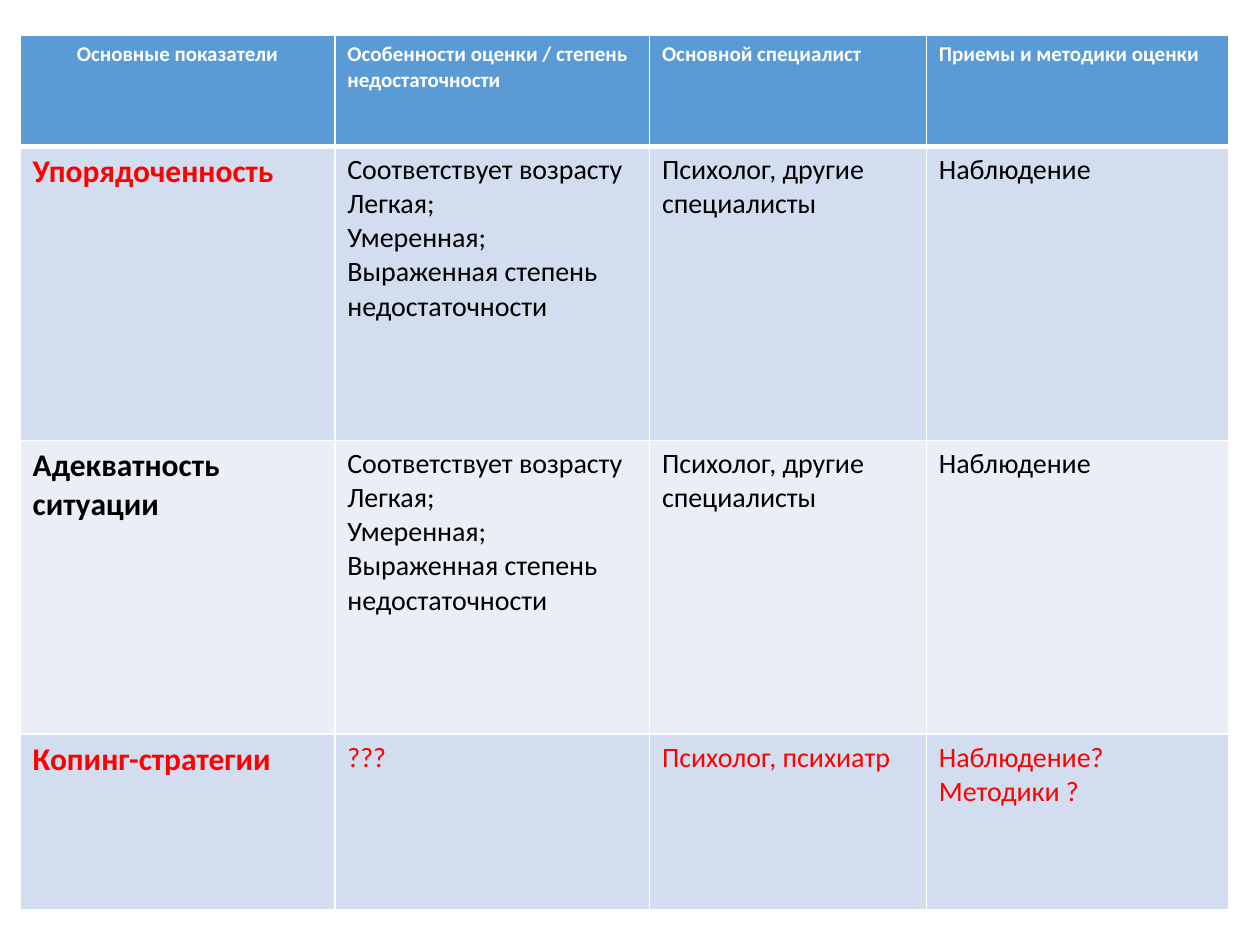
import dataclasses

import lxml.etree
import pptx
import pptx.dml.color
import pptx.enum.text
import pptx.oxml.ns
import pptx.util

PX = 9144  # EMU in one px, at 100 px to the inch


@dataclasses.dataclass(frozen=True)
class Theme:
    font: str = "Calibri"
    white: str = "FFFFFF"
    black: str = "000000"
    red: str = "FF0000"
    head: str = "5B9BD5"
    bands: tuple = ("D2DEEF", "EAEFF7")
    small: int = 12
    body: int = 16
    large: int = 18


THEME = Theme()
COLS = (250, 250, 220, 240)
ROWS = (88, 233, 233, 139)
HEADS = (
    "Основные показатели",
    "Особенности оценки / степень недостаточности",
    "Основной специалист",
    "Приемы и методики оценки",
)
GRADES = (
    "Соответствует возрасту\nЛегкая;\nУмеренная;\n"
    "Выраженная степень недостаточности"
)
STAFF = "Психолог, другие специалисты"
WATCH = "Наблюдение"
# Each row: colour of the first cell, colour of the others, texts
BODY = (
    (THEME.red, THEME.black, ("Упорядоченность", GRADES, STAFF, WATCH)),
    (THEME.black, THEME.black, ("Адекватность ситуации", GRADES, STAFF, WATCH)),
    (THEME.red, THEME.red, ("Копинг-стратегии", "???", "Психолог, психиатр",
                            "Наблюдение?\nМетодики ?")),
)


def rgb(code):
    return pptx.dml.color.RGBColor.from_string(code)


def write(frame, text, size=THEME.body, color=THEME.black, bold=False,
          align=pptx.enum.text.PP_ALIGN.LEFT):
    """Put each line of text in a paragraph of its own."""
    frame.text = text
    for para in frame.paragraphs:
        para.alignment = align
        for run in para.runs:
            font = run.font
            font.name = THEME.font
            font.size = pptx.util.Pt(size)
            font.bold = bold
            font.color.rgb = rgb(color)


def edge(cell, base=1):
    """Draw white borders, the bottom one base points wide."""
    props = cell._tc.get_or_add_tcPr()
    for side, width in (("L", 1), ("R", 1), ("T", 1), ("B", base)):
        line = lxml.etree.SubElement(
            props, pptx.oxml.ns.qn("a:ln" + side), w=str(pptx.util.Pt(width)))
        fill = lxml.etree.SubElement(line, pptx.oxml.ns.qn("a:solidFill"))
        lxml.etree.SubElement(
            fill, pptx.oxml.ns.qn("a:srgbClr"), val=THEME.white)


def paint(cell, color, base=1):
    edge(cell, base)
    cell.fill.solid()
    cell.fill.fore_color.rgb = rgb(color)


def head_row(grid):
    for col, text in enumerate(HEADS):
        cell = grid.cell(0, col)
        paint(cell, THEME.head, base=3)
        align = pptx.enum.text.PP_ALIGN
        write(cell.text_frame, text, size=THEME.small, color=THEME.white,
              bold=True, align=align.LEFT if col else align.CENTER)


def body_rows(grid):
    for row, (first, rest, texts) in enumerate(BODY):
        for col, text in enumerate(texts):
            cell = grid.cell(row + 1, col)
            paint(cell, THEME.bands[row % 2])
            if col:
                write(cell.text_frame, text, color=rest)
            else:
                write(cell.text_frame, text, size=THEME.large, color=first,
                      bold=True)


def add_grid(slide, left, top, width, height):
    """Fill the box with the table, sharing it out by COLS and ROWS."""
    grid = slide.shapes.add_table(
        len(ROWS), len(COLS), left * PX, top * PX, width * PX, height * PX
    ).table
    for col, share in zip(grid.columns, COLS):
        col.width = round(width * PX * share / sum(COLS))
    for row, share in zip(grid.rows, ROWS):
        row.height = round(height * PX * share / sum(ROWS))
    head_row(grid)
    body_rows(grid)


def main():
    deck = pptx.Presentation()
    deck.slide_width = 1000 * PX
    deck.slide_height = 750 * PX
    slide = deck.slides.add_slide(deck.slide_layouts[6])
    add_grid(slide, 16, 28, 959, 694)
    deck.save("out.pptx")


if __name__ == "__main__":
    main()
